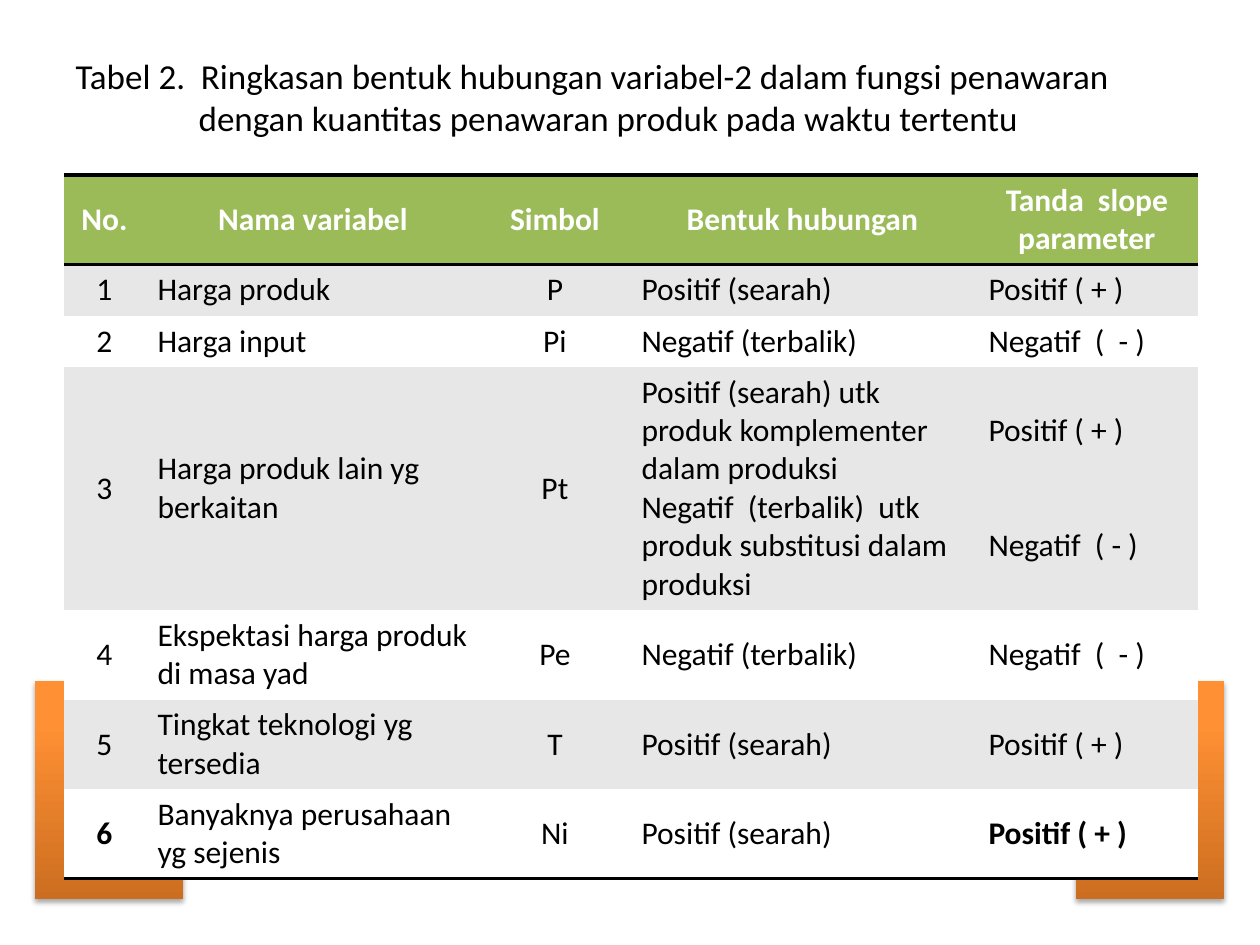
from lxml import etree
from pptx import Presentation
from pptx.dml.color import RGBColor
from pptx.enum.shapes import MSO_SHAPE
from pptx.enum.text import MSO_ANCHOR, PP_ALIGN
from pptx.oxml import parse_xml
from pptx.oxml.ns import nsdecls, qn
from pptx.util import Emu, Pt

RECTANGLE = MSO_SHAPE.RECTANGLE
MIDDLE = MSO_ANCHOR.MIDDLE
LEFT = PP_ALIGN.LEFT
CENTER = PP_ALIGN.CENTER

PIXELS_PER_INCH = 126
EMU_PER_PIXEL = 914400 / PIXELS_PER_INCH
FONT = "Calibri"
NO_TABLE_STYLE = "{2D5ABB26-0587-4C30-8999-92F81FD0307C}"
COLORS = {
    "black": "000000",
    "white": "FFFFFF",
    "header": "9BBB59",
    "band": "E7E7E7",
    "bar_dark": "CC6E20",
    "bar_light": "FF9034",
    "bar_top": "FF9136",
}
BAR_STOPS = [(0, "bar_dark"), (80, "bar_light"), (100, "bar_top")]

TITLE = (
    "Tabel 2.  Ringkasan bentuk hubungan variabel-2 dalam fungsi penawaran "
    "dengan kuantitas penawaran produk pada waktu tertentu"
)
COLUMN_WIDTHS = [81, 336, 148, 347, 222]
ROW_HEIGHTS = [89, 51, 51, 243, 89, 89, 89]
CENTERED_COLUMNS = {0, 2}
BOLD_BODY_CELLS = {(6, 0), (6, 4)}
ROWS = [
    ["No.", "Nama variabel", "Simbol", "Bentuk hubungan", "Tanda  slope parameter"],
    ["1", "Harga produk", "P", "Positif (searah)", "Positif ( + )"],
    ["2", "Harga input", "Pi", "Negatif (terbalik)", "Negatif  (  - )"],
    [
        "3",
        "Harga produk lain yg berkaitan",
        "Pt",
        "Positif (searah) utk produk komplementer dalam produksi\n"
        "Negatif  (terbalik)  utk produk substitusi dalam produksi",
        "Positif ( + )\nNegatif  ( - )",
    ],
    ["4", "Ekspektasi harga produk di masa yad", "Pe", "Negatif (terbalik)", "Negatif  (  - )"],
    ["5", "Tingkat teknologi yg tersedia", "T", "Positif (searah)", "Positif ( + )"],
    ["6", "Banyaknya perusahaan yg sejenis", "Ni", "Positif (searah)", "Positif ( + )"],
]


def px(length):
    return Emu(round(length * EMU_PER_PIXEL))


def rgb(name):
    return RGBColor.from_string(COLORS[name])


def format_paragraph(paragraph, size, color, bold=False, alignment=LEFT):
    paragraph.alignment = alignment
    for run in paragraph.runs:
        run.font.name = FONT
        run.font.size = Pt(size)
        run.font.bold = bold
        run.font.color.rgb = rgb(color)


def add_title(slide):
    title = slide.shapes.title
    title.left, title.top, title.width, title.height = px(63), px(38), px(1134), px(117)
    title.text_frame.text = TITLE
    title.text_frame.vertical_anchor = MIDDLE
    paragraph = title.text_frame.paragraphs[0]
    format_paragraph(paragraph, 20, "black")
    properties = paragraph._p.get_or_add_pPr()
    properties.set("marL", str(px(123)))
    properties.set("indent", str(px(-123)))


def add_bar(slide, left):
    shape = slide.shapes.add_shape(RECTANGLE, px(left), px(681), px(148), px(218))
    shape.line.fill.background()
    shape.fill.gradient()
    shape.fill.gradient_angle = 90
    stops = shape._element.spPr.find(".//" + qn("a:gsLst"))
    for stop in list(stops):
        stops.remove(stop)
    for position, color in BAR_STOPS:
        stop = etree.SubElement(stops, qn("a:gs"), pos=str(position * 1000))
        etree.SubElement(stop, qn("a:srgbClr"), val=COLORS[color])
    shape.shadow.inherit = False
    shape._element.spPr.find(qn("a:effectLst")).append(parse_xml(
        f'<a:outerShdw {nsdecls("a")} blurRad="{Pt(3.1)}" dist="{Pt(1.8)}" '
        f'dir="5400000" rotWithShape="0"><a:srgbClr val="{COLORS["black"]}">'
        '<a:alpha val="35000"/></a:srgbClr></a:outerShdw>'
    ))


def add_cell_border(cell, side):
    cell._tc.get_or_add_tcPr().append(parse_xml(
        f'<a:{side} {nsdecls("a")} w="{Pt(2)}"><a:solidFill>'
        f'<a:srgbClr val="{COLORS["black"]}"/></a:solidFill></a:{side}>'
    ))


def fill_cell(cell, row, column, text):
    is_header = row == 0
    if is_header:
        add_cell_border(cell, "lnT")
    if row in (0, len(ROWS) - 1):
        add_cell_border(cell, "lnB")
    cell.fill.solid()
    cell.fill.fore_color.rgb = rgb("header" if is_header else "band" if row % 2 else "white")
    cell.vertical_anchor = MIDDLE
    cell.text_frame.text = text
    color = "white" if is_header else "black"
    bold = is_header or (row, column) in BOLD_BODY_CELLS
    alignment = CENTER if is_header or column in CENTERED_COLUMNS else LEFT
    for paragraph in cell.text_frame.paragraphs:
        format_paragraph(paragraph, 18, color, bold, alignment)


def add_variable_table(slide):
    frame = slide.shapes.add_table(
        len(ROWS), len(COLUMN_WIDTHS), px(64), px(175),
        px(sum(COLUMN_WIDTHS)), px(sum(ROW_HEIGHTS)),
    )
    table = frame.table
    table._tbl.tblPr.find(qn("a:tableStyleId")).text = NO_TABLE_STYLE
    for column, width in zip(table.columns, COLUMN_WIDTHS):
        column.width = px(width)
    for row, height in zip(table.rows, ROW_HEIGHTS):
        row.height = px(height)
    for row, texts in enumerate(ROWS):
        for column, text in enumerate(texts):
            fill_cell(table.cell(row, column), row, column, text)
    table.cell(3, 4).text_frame.paragraphs[1].space_before = Pt(44)


def main():
    presentation = Presentation()
    presentation.slide_width, presentation.slide_height = px(1260), px(945)
    slide = presentation.slides.add_slide(presentation.slide_layouts[5])
    for left in (35, 1076):
        add_bar(slide, left)
    add_title(slide)
    add_variable_table(slide)
    presentation.save("out.pptx")


if __name__ == "__main__":
    main()
